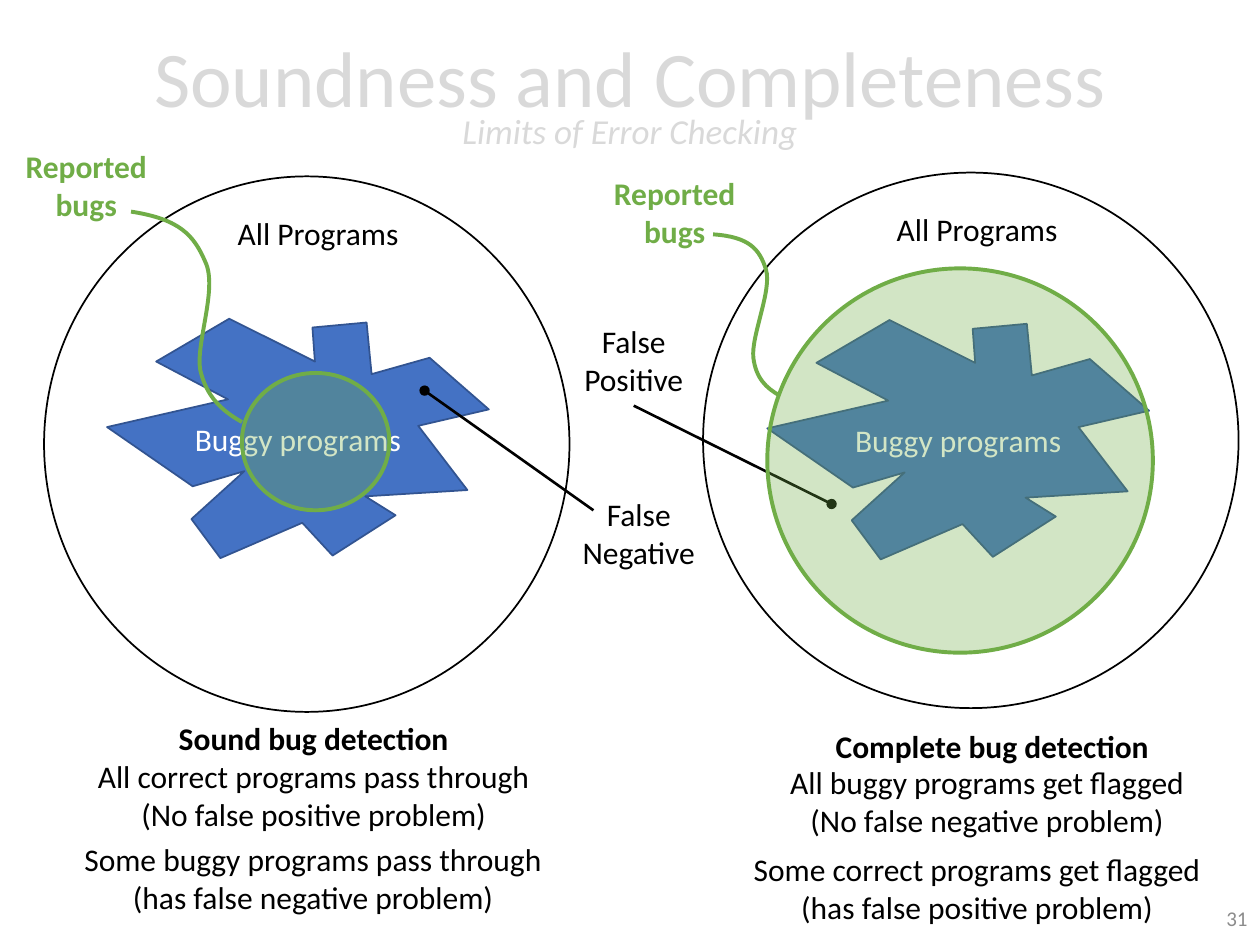
from dataclasses import dataclass

from lxml.etree import SubElement
from pptx import Presentation
from pptx.dml.color import RGBColor
from pptx.enum.shapes import MSO_CONNECTOR, MSO_SHAPE
from pptx.enum.text import MSO_ANCHOR, MSO_AUTO_SIZE, PP_ALIGN
from pptx.oxml.ns import qn
from pptx.util import Inches, Pt


@dataclass(frozen=True)
class Theme:
    font: str = "Calibri"
    ink: str = "000000"
    paper: str = "FFFFFF"
    heading: str = "D9D9D9"
    muted: str = "8C8C8C"
    buggy: str = "4472C4"
    buggy_edge: str = "325491"
    reported: str = "70AD47"
    reported_alpha: int = 31
    title_size: float = 45
    subtitle_size: float = 20
    body_size: float = 18
    number_size: float = 12
    thin: float = 1
    pointer: float = 1.5
    thick: float = 2.25


class DiagramSlide:
    """Holds the theme and the slide being drawn."""

    def __init__(self, slide, theme):
        self.slide, self.shapes, self.theme = slide, slide.shapes, theme

    def _font(self, font, size, color, bold=False):
        font.name, font.size, font.bold = self.theme.font, Pt(size), bold
        font.color.rgb = RGBColor.from_string(color)

    def _line(self, line, color, width):
        line.color.rgb = RGBColor.from_string(color)
        line.width = Pt(width)

    def _fill(self, shape, color):
        shape.fill.solid()
        shape.fill.fore_color.rgb = RGBColor.from_string(color)

    def _outline(self, points, closed):
        start, *rest = [(Inches(x), Inches(y)) for x, y in points]
        builder = self.shapes.build_freeform(*start)
        builder.add_line_segments(rest, close=closed)
        shape = builder.convert_to_shape()
        shape.shadow.inherit = False
        return shape

    def title(self, box, heading, subtitle):
        t = self.theme
        holder = self.shapes.title
        holder.left, holder.top, holder.width, holder.height = map(Inches, box)
        holder.text_frame.vertical_anchor = MSO_ANCHOR.MIDDLE
        paragraph = holder.text_frame.paragraphs[0]
        paragraph.alignment, paragraph.line_spacing = PP_ALIGN.CENTER, 0.7
        main = paragraph.add_run()
        main.text = heading
        self._font(main.font, t.title_size, t.heading)
        paragraph.add_line_break()
        sub = paragraph.add_run()
        sub.text = subtitle
        self._font(sub.font, t.subtitle_size, t.heading)
        sub.font.italic = True

    def label(self, box, text, color=None, bold=False):
        frame = self.shapes.add_textbox(*map(Inches, box)).text_frame
        frame.word_wrap, frame.auto_size = False, MSO_AUTO_SIZE.SHAPE_TO_FIT_TEXT
        frame.text = text
        for paragraph in frame.paragraphs:
            paragraph.alignment = PP_ALIGN.CENTER
            self._font(paragraph.font, self.theme.body_size, color or self.theme.ink, bold)

    def page_number(self, box, number):
        frame = self.shapes.add_textbox(*map(Inches, box)).text_frame
        frame.word_wrap, frame.vertical_anchor = True, MSO_ANCHOR.MIDDLE
        frame.text = number
        frame.paragraphs[0].alignment = PP_ALIGN.RIGHT
        self._font(frame.paragraphs[0].font, self.theme.number_size, self.theme.muted)

    def ellipse(self, box, fill, line, width, alpha=None):
        shape = self.shapes.add_shape(MSO_SHAPE.OVAL, *map(Inches, box))
        shape.shadow.inherit = False
        self._fill(shape, fill)
        self._line(shape.line, line, width)
        if alpha is not None:
            color = shape._element.spPr.find(qn("a:solidFill"))[0]
            SubElement(color, qn("a:alpha"), val=str(alpha * 1000))

    def star(self, points, text):
        t = self.theme
        shape = self._outline(points, closed=True)
        self._fill(shape, t.buggy)
        self._line(shape.line, t.buggy_edge, t.thin)
        frame = shape.text_frame
        frame.vertical_anchor, frame.text = MSO_ANCHOR.MIDDLE, text
        frame.paragraphs[0].alignment = PP_ALIGN.CENTER
        self._font(frame.paragraphs[0].font, t.body_size, t.paper)

    def curve(self, points):
        """Draw a start point followed by triples of Bezier points."""
        shape = self._outline(points, closed=False)
        shape.fill.background()
        self._line(shape.line, self.theme.reported, self.theme.thick)
        segments = shape._element.xpath(".//a:lnTo")
        outline = segments[0].getparent()
        for i in range(0, len(segments), 3):
            bezier = SubElement(outline, qn("a:cubicBezTo"))
            for segment in segments[i:i + 3]:
                bezier.append(segment[0])
                outline.remove(segment)

    def pointer(self, start, end):
        line = self.shapes.add_connector(
            MSO_CONNECTOR.STRAIGHT, *map(Inches, (*start, *end)))
        self._line(line.line, self.theme.ink, self.theme.pointer)
        properties = line._element.spPr
        SubElement(properties.find(qn("a:ln")), qn("a:tailEnd"), type="oval")
        SubElement(properties, qn("a:effectLst"))


BUGGY_OUTLINE = [
    (2.5, 2.87), (1.82, 2.53), (1.24, 2.87), (1.81, 3.17), (0.85, 3.39),
    (1.53, 3.86), (1.94, 3.74), (1.52, 4.12), (1.75, 4.43), (2.4, 4.15),
    (2.64, 4.41), (3.14, 4.09), (2.9, 3.94), (3.71, 3.89), (3.32, 3.38),
    (3.88, 3.25), (3.41, 2.84), (2.95, 2.97), (2.91, 2.56), (2.48, 2.6),
]

# All-programs circle, its label, and the offset of the buggy outline
PANELS = [
    ((0.35, 1.4, 4.17, 4.25), (1.78, 1.65, 1.49, 0.4), (0, 0)),
    ((5.58, 1.37, 4.25, 4.25), (7.01, 1.62, 1.49, 0.4), (5.24, 0.01)),
]

# Reported-bugs label, leader curve and circle
REPORTS = [
    ((0.1, 1.12, 1.17, 0.71),
     [(1.04, 1.68), (1.43, 1.74), (1.54, 1.87), (1.63, 2.08), (1.73, 2.29),
      (1.55, 2.73), (1.59, 2.94), (1.64, 3.15), (1.76, 3.26), (1.92, 3.35)],
     (1.92, 2.96, 1.17, 1.09)),
    ((4.77, 1.33, 1.17, 0.71),
     [(5.66, 1.86), (5.95, 1.88), (6.03, 1.98), (6.08, 2.14), (6.13, 2.3),
      (5.96, 2.67), (5.98, 2.84), (6, 3), (6.08, 3.08), (6.19, 3.14)],
     (6.09, 2.13, 3.06, 3.05)),
]

ERRORS = [
    ("False\nPositive", (4.53, 2.51, 1, 0.71), (5.03, 3.22), (6.6, 4)),
    ("False\nNegative", (4.52, 3.88, 1.1, 0.71), (4.71, 4.05), (3.37, 3.1)),
]

CAPTIONS = [
    ("Sound bug detection", (1.31, 5.66, 2.36, 0.4), True),
    ("All correct programs pass through\n(No false positive problem)",
     (0.66, 5.96, 3.66, 0.71), False),
    ("Some buggy programs pass through\n(has false negative problem)",
     (0.55, 6.62, 3.87, 0.71), False),
    ("Complete bug detection", (6.5, 5.72, 2.75, 0.4), True),
    ("All buggy programs get flagged\n(No false negative problem)",
     (6.12, 6.01, 3.43, 0.71), False),
    ("Some correct programs get flagged\n(has false positive problem)",
     (5.83, 6.7, 3.85, 0.71), False),
]


def main():
    deck = Presentation()
    deck.slide_width, deck.slide_height = Inches(10), Inches(7.5)
    theme = Theme()
    diagram = DiagramSlide(deck.slides.add_slide(deck.slide_layouts[5]), theme)

    diagram.title((0.69, 0.09, 8.62, 1.45), "Soundness and Completeness",
                  "Limits of Error Checking")

    # Program sets
    for circle, label, (dx, dy) in PANELS:
        diagram.ellipse(circle, theme.paper, theme.ink, theme.thin)
        diagram.label(label, "All Programs")
        diagram.star([(x + dx, y + dy) for x, y in BUGGY_OUTLINE], "Buggy programs")

    # Error examples, beneath the translucent report circles
    for text, box, start, end in ERRORS:
        diagram.pointer(start, end)
        diagram.label(box, text)

    # Reported bugs
    for label, leader, circle in REPORTS:
        diagram.label(label, "Reported\nbugs", theme.reported, bold=True)
        diagram.curve(leader)
        diagram.ellipse(circle, theme.reported, theme.reported, theme.thick,
                        theme.reported_alpha)

    # Captions and page number
    for text, box, bold in CAPTIONS:
        diagram.label(box, text, bold=bold)
    diagram.page_number((7.75, 7.09, 2.25, 0.4), "31")

    deck.save("out.pptx")


if __name__ == "__main__":
    main()
